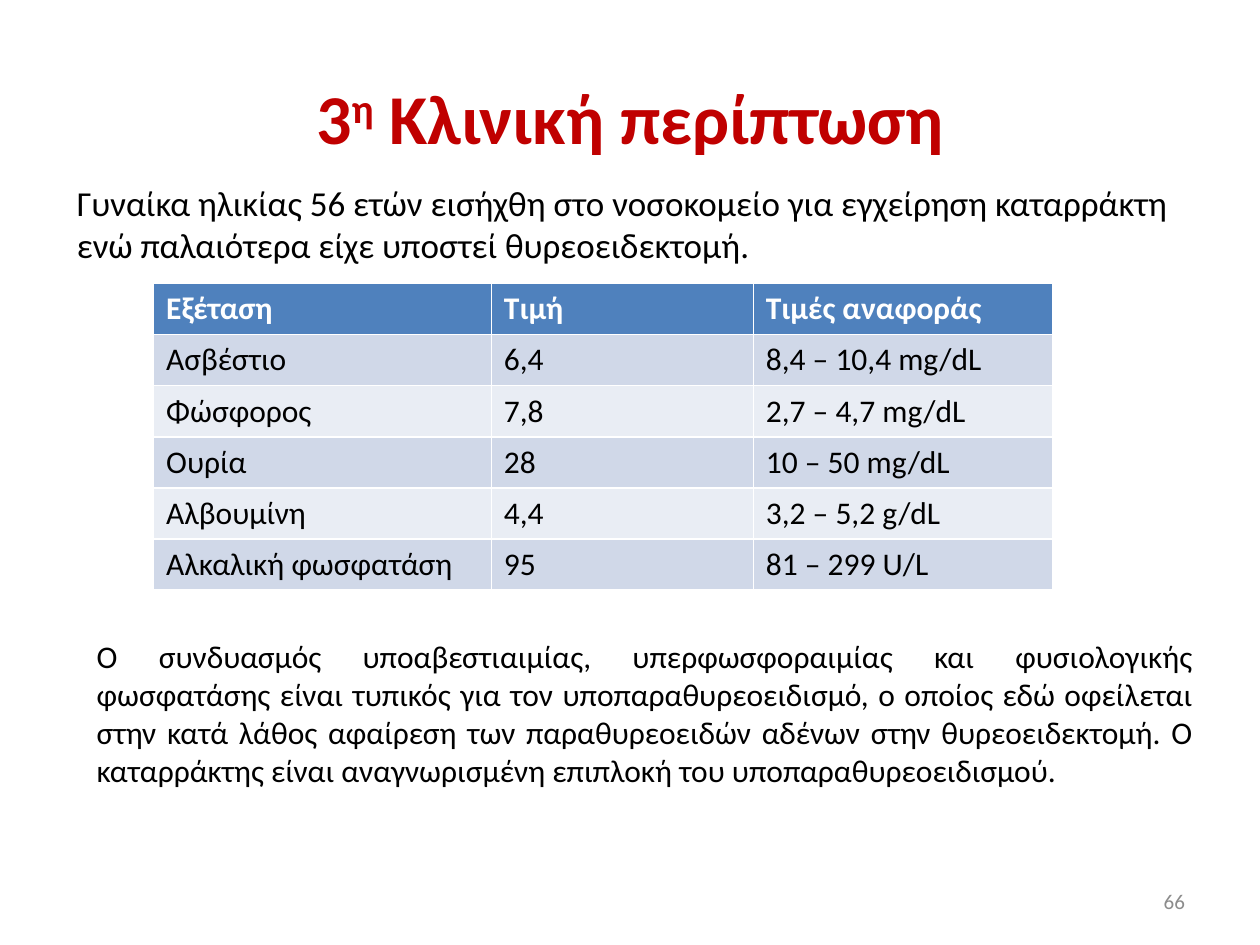
import dataclasses
import typing

import lxml.etree
import pptx
import pptx.dml.color
import pptx.enum.text
import pptx.oxml.ns
import pptx.util

Align = pptx.enum.text.PP_ALIGN
Anchor = pptx.enum.text.MSO_ANCHOR


@dataclasses.dataclass(frozen=True)
class Theme:
    font: str = "Calibri"
    title_color: str = "C00000"
    text_color: str = "000000"
    number_color: str = "8C8C8C"
    header_text: str = "FFFFFF"
    header_fill: str = "4F81BD"
    band_fills: tuple[str, str] = ("D0D8E8", "E9EDF4")
    title_size: float = 40
    body_size: float = 20
    text_size: float = 18
    number_size: float = 12


class Box(typing.NamedTuple):
    """Position and size in points."""
    left: float
    top: float
    width: float
    height: float

    def lengths(self) -> dict[str, int]:
        return {name: pptx.util.Pt(value) for name, value in self._asdict().items()}


class TextBlock(typing.NamedTuple):
    text: str
    box: Box
    size: float
    color: str
    align: Align
    anchor: Anchor


THEME = Theme()

TITLE_BOX = Box(36, 21.6, 648, 90)
BODY_BOX = Box(36.7, 100, 648, 356.4)
TABLE_BOX = Box(87.8, 162, 514.1, 175.2)
COLUMN_WIDTHS = (193, 149.7, 171.4)

TITLE_PARTS = (("3", False), ("η", True), (" Κλινική περίπτωση", False))
HISTORY = ("Γυναίκα ηλικίας 56 ετών εισήχθη στο νοσοκομείο για εγχείρηση καταρράκτη "
           "ενώ παλαιότερα είχε υποστεί θυρεοειδεκτομή.")
TEST_ROWS = (
    ("Εξέταση", "Τιμή", "Τιμές αναφοράς"),
    ("Ασβέστιο", "6,4", "8,4 – 10,4 mg/dL"),
    ("Φώσφορος", "7,8", "2,7 – 4,7 mg/dL"),
    ("Ουρία", "28", "10 – 50 mg/dL"),
    ("Αλβουμίνη", "4,4", "3,2 – 5,2 g/dL"),
    ("Αλκαλική φωσφατάση", "95", "81 – 299 U/L"),
)
DIAGNOSIS = (
    "Ο συνδυασμός υποαβεστιαιμίας, υπερφωσφοραιμίας και φυσιολογικής φωσφατάσης "
    "είναι τυπικός για τον υποπαραθυρεοειδισμό, ο οποίος εδώ οφείλεται στην κατά "
    "λάθος αφαίρεση των παραθυρεοειδών αδένων στην θυρεοειδεκτομή. Ο καταρράκτης "
    "είναι αναγνωρισμένη επιπλοκή του υποπαραθυρεοειδισμού."
)
TEXT_BLOCKS = (
    TextBlock(DIAGNOSIS, Box(48.2, 360.7, 640.8, 94.3), THEME.text_size,
              THEME.text_color, Align.JUSTIFY, Anchor.TOP),
    TextBlock("66", Box(516.2, 500.4, 168, 28.8), THEME.number_size,
              THEME.number_color, Align.RIGHT, Anchor.MIDDLE),
)


def set_attributes(target: typing.Any, values: dict[str, typing.Any]) -> None:
    for name, value in values.items():
        setattr(target, name, value)


def add_run(paragraph: typing.Any, text: str, size: float, color: str,
            bold: bool = False) -> typing.Any:
    run = paragraph.add_run()
    run.text = text
    set_attributes(run.font, {"name": THEME.font, "size": pptx.util.Pt(size), "bold": bold})
    run.font.color.rgb = pptx.dml.color.RGBColor.from_string(color)
    return run


def fill_title(shape: typing.Any) -> None:
    set_attributes(shape, TITLE_BOX.lengths())
    paragraph = shape.text_frame.paragraphs[0]
    paragraph.alignment = Align.CENTER
    for text, raised in TITLE_PARTS:
        run = add_run(paragraph, text, THEME.title_size, THEME.title_color, bold=True)
        if raised:
            run._r.get_or_add_rPr().set("baseline", "30000")


def fill_body(shape: typing.Any) -> None:
    set_attributes(shape, BODY_BOX.lengths())
    paragraph = shape.text_frame.paragraphs[0]
    add_run(paragraph, HISTORY, THEME.body_size, THEME.text_color)
    # Plain paragraph: no bullet and no hanging indent
    properties = paragraph._p.get_or_add_pPr()
    properties.set("marL", "0")
    properties.set("indent", "0")
    lxml.etree.SubElement(properties, pptx.oxml.ns.qn("a:buNone"))


def add_test_table(slide: typing.Any) -> None:
    table = slide.shapes.add_table(len(TEST_ROWS), len(COLUMN_WIDTHS),
                                   **TABLE_BOX.lengths()).table
    for column, width in zip(table.columns, COLUMN_WIDTHS):
        column.width = pptx.util.Pt(width)
    for row_index, values in enumerate(TEST_ROWS):
        header = row_index == 0
        fill = THEME.header_fill if header else THEME.band_fills[(row_index - 1) % 2]
        color = THEME.header_text if header else THEME.text_color
        for column_index, text in enumerate(values):
            cell = table.cell(row_index, column_index)
            cell.fill.solid()
            cell.fill.fore_color.rgb = pptx.dml.color.RGBColor.from_string(fill)
            add_run(cell.text_frame.paragraphs[0], text, THEME.text_size, color, header)


def add_text_block(slide: typing.Any, block: TextBlock) -> None:
    frame = slide.shapes.add_textbox(**block.box.lengths()).text_frame
    set_attributes(frame, {"word_wrap": True, "vertical_anchor": block.anchor})
    paragraph = frame.paragraphs[0]
    paragraph.alignment = block.align
    add_run(paragraph, block.text, block.size, block.color)


def main() -> None:
    presentation = pptx.Presentation()
    set_attributes(presentation, {"slide_width": pptx.util.Pt(720),
                                  "slide_height": pptx.util.Pt(540)})
    slide = presentation.slides.add_slide(presentation.slide_layouts[1])

    # Title and case history
    fill_title(slide.shapes.title)
    fill_body(slide.placeholders[1])

    # Laboratory results
    add_test_table(slide)

    # Diagnosis and page number
    for block in TEXT_BLOCKS:
        add_text_block(slide, block)

    presentation.save("out.pptx")


if __name__ == "__main__":
    main()
